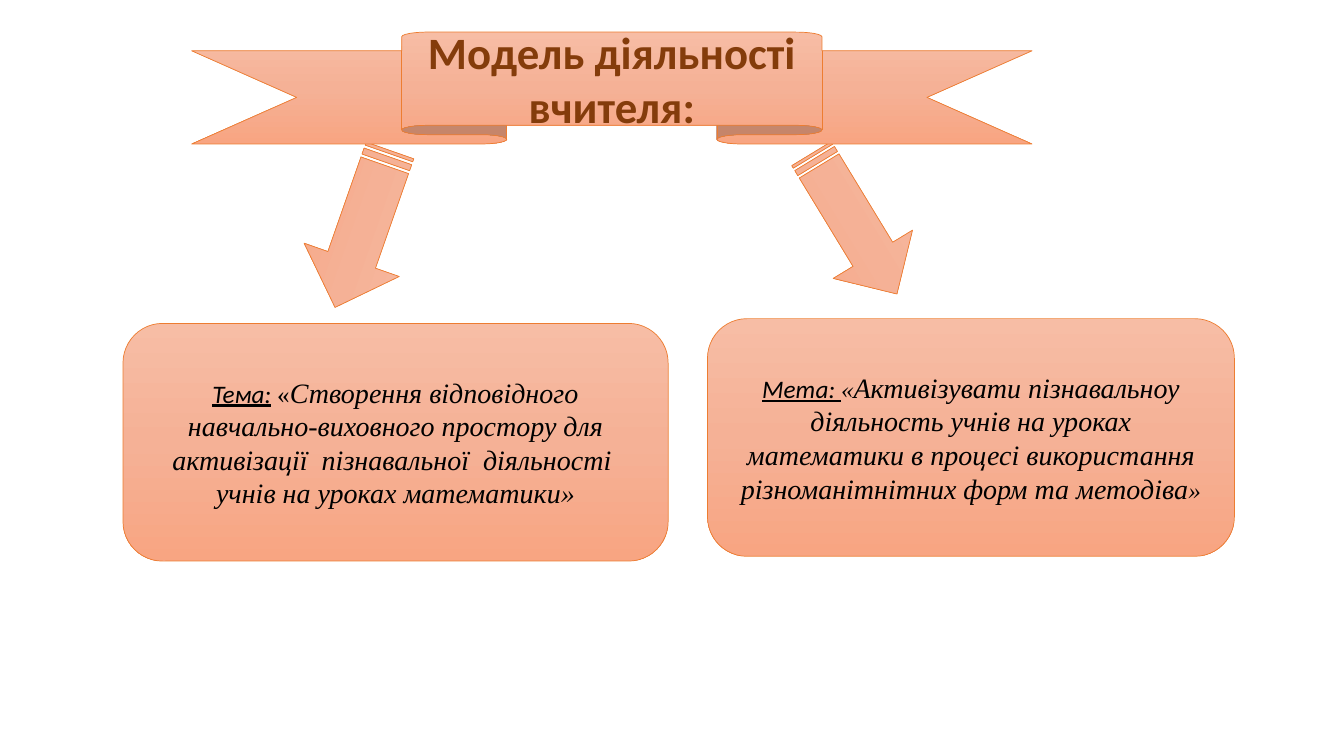
import copy
from dataclasses import dataclass

import lxml.etree
import pptx
import pptx.dml.color
import pptx.enum.shapes
import pptx.enum.text
import pptx.oxml.ns
import pptx.util
from pptx.util import Cm

SHAPE = pptx.enum.shapes.MSO_SHAPE
qn = pptx.oxml.ns.qn


def rgb(value):
    return pptx.dml.color.RGBColor.from_string(value)


@dataclass(frozen=True)
class Theme:
    gradient: tuple = ("F7BDA5", "F5B196", "F8A582")
    line: str = "ED7D31"
    line_width: float = 0.5
    title_color: str = "843C0B"
    title_outline: str = "5B9BD5"
    text_color: str = "000000"
    label_font: str = "Calibri"
    text_font: str = "Times New Roman"
    title_size: int = 32
    text_size: int = 20
    label_size: int = 18


class SlideBuilder:
    def __init__(self, slide, theme):
        self.slide = slide
        self.theme = theme

    def shape(self, kind, left, top, width, height, rotation=0):
        shape = self.slide.shapes.add_shape(kind, Cm(left), Cm(top), Cm(width), Cm(height))
        shape.rotation = rotation
        shape.shadow.inherit = False
        shape.line.color.rgb = rgb(self.theme.line)
        shape.line.width = pptx.util.Pt(self.theme.line_width)
        self.fill_gradient(shape.fill)
        return shape

    def fill_gradient(self, fill):
        fill.gradient()
        fill.gradient_angle = 270  # counter-clockwise: runs from top to bottom
        # The default gradient has two stops; a middle one is added
        first = fill._fill._gradFill.find(qn("a:gsLst"))[0]
        first.addnext(copy.deepcopy(first))
        last_index = len(self.theme.gradient) - 1
        for index, (stop, color) in enumerate(zip(fill.gradient_stops, self.theme.gradient)):
            stop.color.rgb = rgb(color)
            stop.position = index / last_index

    def card(self, left, top, width, height, runs):
        shape = self.shape(SHAPE.ROUNDED_RECTANGLE, left, top, width, height)
        frame = shape.text_frame
        frame.word_wrap = True
        frame.vertical_anchor = pptx.enum.text.MSO_ANCHOR.MIDDLE
        paragraph = frame.paragraphs[0]
        paragraph.alignment = pptx.enum.text.PP_ALIGN.CENTER
        for text, font_name, size, italic, underline in runs:
            run = paragraph.add_run()
            run.text = text
            run.font.name = font_name
            run.font.size = pptx.util.Pt(size)
            run.font.italic = italic
            run.font.underline = underline
            run.font.color.rgb = rgb(self.theme.text_color)

    def title_ribbon(self, left, top, width, height, text):
        self.shape(SHAPE.UP_RIBBON, left, top, width, height)
        # The title covers the middle panel: half the width, five sixths of the height
        title = self.slide.shapes.title
        title.left, title.top = Cm(left + width / 4), Cm(top)
        title.width, title.height = Cm(width / 2), Cm(height * 5 / 6)
        title.element.getparent().append(title.element)  # in front of the ribbon
        frame = title.text_frame
        frame.text = text
        frame.word_wrap = True
        frame.auto_size = pptx.enum.text.MSO_AUTO_SIZE.NONE
        frame.vertical_anchor = pptx.enum.text.MSO_ANCHOR.MIDDLE
        paragraph = frame.paragraphs[0]
        paragraph.alignment = pptx.enum.text.PP_ALIGN.CENTER
        paragraph.font.name = self.theme.label_font
        paragraph.font.size = pptx.util.Pt(self.theme.title_size)
        paragraph.font.bold = True
        paragraph.font.color.rgb = rgb(self.theme.title_color)
        # Letter outline
        properties = paragraph.runs[0]._r.get_or_add_rPr()
        outline = lxml.etree.Element(qn("a:ln"), w=str(pptx.util.Pt(1)))
        solid = lxml.etree.SubElement(outline, qn("a:solidFill"))
        lxml.etree.SubElement(solid, qn("a:srgbClr"), val=self.theme.title_outline)
        properties.insert(0, outline)


def main():
    presentation = pptx.Presentation()
    presentation.slide_width, presentation.slide_height = Cm(33.87), Cm(19.05)
    slide = presentation.slides.add_slide(presentation.slide_layouts[5])
    theme = Theme()
    builder = SlideBuilder(slide, theme)

    # Arrows from the ribbon to the cards
    builder.shape(SHAPE.STRIPED_RIGHT_ARROW, 7.04, 4.5, 4.19, 2.54, rotation=109.3)
    builder.shape(SHAPE.STRIPED_RIGHT_ARROW, 19.46, 4.47, 4.14, 2.34, rotation=58.7)

    # Topic and aim cards
    label, serif = theme.label_font, theme.text_font
    small, large = theme.label_size, theme.text_size
    builder.card(3.1, 8.15, 13.74, 5.99, [
        ("Тема:", label, small, True, True),
        (" ", label, small, True, False),
        ("«", serif, small, False, False),
        ("Створення відповідного навчально-виховного простору для "
         "активізації  пізнавальної  діяльності  учнів на уроках математики»",
         serif, large, True, False),
    ])
    builder.card(17.83, 8.03, 13.28, 5.99, [
        ("Мета: ", label, small, True, True),
        ("«", serif, small, True, False),
        ("Активізувати пізнавальноу діяльность учнів на уроках математики "
         "в процесі використання різноманітнітних форм та методіва",
         serif, large, True, False),
        ("»", serif, small, True, False),
    ])

    # Title on the ribbon
    builder.title_ribbon(4.83, 0.81, 21.18, 2.82, "Модель діяльності вчителя:")

    presentation.save("out.pptx")


if __name__ == "__main__":
    main()
